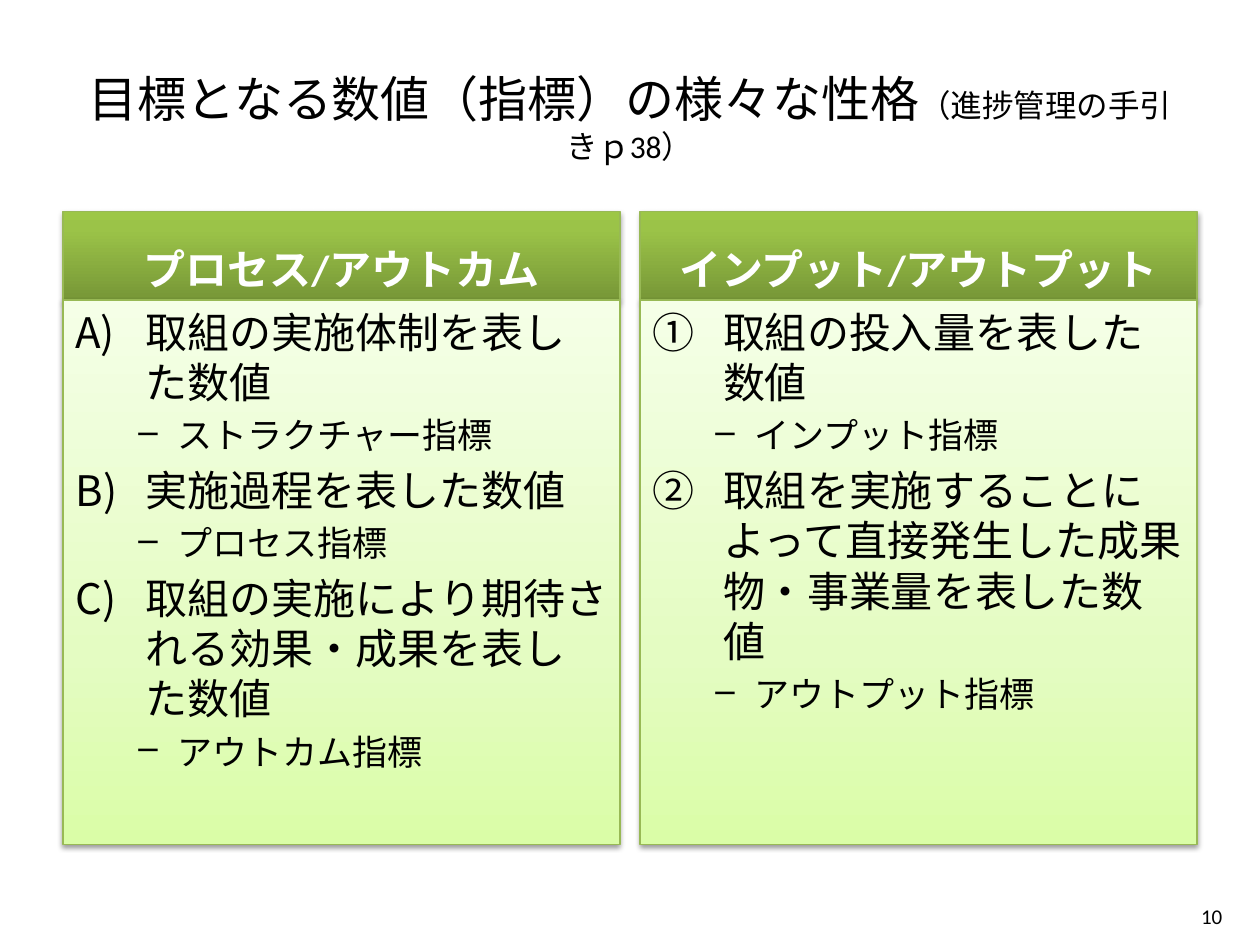
"""Build the slide that compares two families of target indicators."""
from lxml import etree
from pptx import Presentation
from pptx.dml.color import RGBColor
from pptx.enum.shapes import MSO_SHAPE
from pptx.enum.text import MSO_ANCHOR, PP_ALIGN
from pptx.oxml.ns import qn
from pptx.util import Inches, Pt

RECTANGLE = MSO_SHAPE.RECTANGLE
TOP, MIDDLE, BOTTOM = MSO_ANCHOR.TOP, MSO_ANCHOR.MIDDLE, MSO_ANCHOR.BOTTOM
LEFT, CENTER, RIGHT = PP_ALIGN.LEFT, PP_ALIGN.CENTER, PP_ALIGN.RIGHT
rgb = RGBColor.from_string

MARGIN, GUTTER = 0.5, 0.16
COLUMN_WIDTH = (10 - 2 * MARGIN - GUTTER) / 2
HEADING_TOP, HEADING_HEIGHT, LIST_HEIGHT = 1.68, 0.7, 4.32
HEADING_STOPS = [(0, "779737"), (80, "9BC348"), (100, "9DC746")]
LIST_STOPS = [(0, "DAFDA7"), (35, "E4FCC2"), (100, "F5FFE7")]
LEVELS = [(24, 0.56, 0.56), (20, 0.81, 0.31)]
COLUMNS = [
    ("プロセス/アウトカム", "alphaUcParenR", [
        ("取組の実施体制を表した数値", "ストラクチャー指標"),
        ("実施過程を表した数値", "プロセス指標"),
        ("取組の実施により期待される効果・成果を表した数値", "アウトカム指標"),
    ]),
    ("インプット/アウトプット", "circleNumDbPlain", [
        ("取組の投入量を表した数値", "インプット指標"),
        ("取組を実施することによって直接発生した成果物・事業量を表した数値",
         "アウトプット指標"),
    ]),
]


def style(paragraph, size, color="000000", align=LEFT, bold=False):
    paragraph.alignment = align
    for run in paragraph.runs:
        run.font.name = "Calibri"
        run.font.size = Pt(size)
        run.font.bold = bold
        run.font.color.rgb = rgb(color)


def add_panel(left, top, height, stops, shadow_alpha, shadow_distance, anchor):
    panel = slide.shapes.add_shape(
        RECTANGLE, Inches(left), Inches(top), Inches(COLUMN_WIDTH), Inches(height))
    panel.fill.gradient()
    panel.fill.gradient_angle = 90
    stop_list = panel.fill._xPr.find(".//" + qn("a:gsLst"))
    stop_list[:] = []
    for position, color in stops:
        stop = etree.SubElement(stop_list, qn("a:gs"), pos=str(position * 1000))
        etree.SubElement(stop, qn("a:srgbClr"), val=color)
    panel.line.color.rgb = rgb("98B955")
    panel.line.width = Pt(0.75)
    panel.shadow.inherit = False
    shadow = etree.SubElement(
        panel.fill._xPr.find(qn("a:effectLst")), qn("a:outerShdw"),
        blurRad=str(Pt(3.1)), dist=str(Pt(shadow_distance)), dir="5400000", rotWithShape="0")
    shade = etree.SubElement(shadow, qn("a:srgbClr"), val="000000")
    etree.SubElement(shade, qn("a:alpha"), val=str(shadow_alpha * 1000))
    panel.text_frame.word_wrap = True
    panel.text_frame.vertical_anchor = anchor
    return panel.text_frame


deck = Presentation()
deck.slide_width, deck.slide_height = Inches(10), Inches(7.5)
slide = deck.slides.add_slide(deck.slide_layouts[5])

title = slide.shapes.title
title.left, title.top = Inches(MARGIN), Inches(0.3)
title.width, title.height = Inches(10 - 2 * MARGIN), Inches(1.25)
title.text_frame.vertical_anchor = MIDDLE
headline = title.text_frame.paragraphs[0]
for part in ("目標となる数値（指標）の様々な性格", "（進捗管理の手引きｐ38）"):
    headline.add_run().text = part
style(headline, 28, align=CENTER)
headline.runs[1].font.size = Pt(18)

for column, (heading, numbering, indicators) in enumerate(COLUMNS):
    left = MARGIN + column * (COLUMN_WIDTH + GUTTER)
    heading_frame = add_panel(
        left, HEADING_TOP, HEADING_HEIGHT, HEADING_STOPS, 35, 1.8, BOTTOM)
    heading_frame.text = heading
    style(heading_frame.paragraphs[0], 24, "FFFFFF", CENTER, True)

    list_frame = add_panel(
        left, HEADING_TOP + HEADING_HEIGHT, LIST_HEIGHT, LIST_STOPS, 38, 1.6, TOP)
    list_frame.text = "\n".join(line for pair in indicators for line in pair)
    for index, item in enumerate(list_frame.paragraphs):
        level = index % 2
        size, margin, hanging = LEVELS[level]
        style(item, size)
        item.level = level
        item.space_before = Pt(size * 0.2)
        properties = item._p.get_or_add_pPr()
        properties.set("marL", str(Inches(margin)))
        properties.set("indent", str(-Inches(hanging)))
        if level:
            etree.SubElement(properties, qn("a:buChar"), char="–")
        else:
            etree.SubElement(properties, qn("a:buAutoNum"), type=numbering)

page_number = slide.shapes.add_textbox(
    Inches(7.47), Inches(7.07), Inches(2.33), Inches(0.4)).text_frame
page_number.word_wrap = True
page_number.vertical_anchor = MIDDLE
page_number.text = "10"
style(page_number.paragraphs[0], 12, align=RIGHT)

deck.save("out.pptx")
